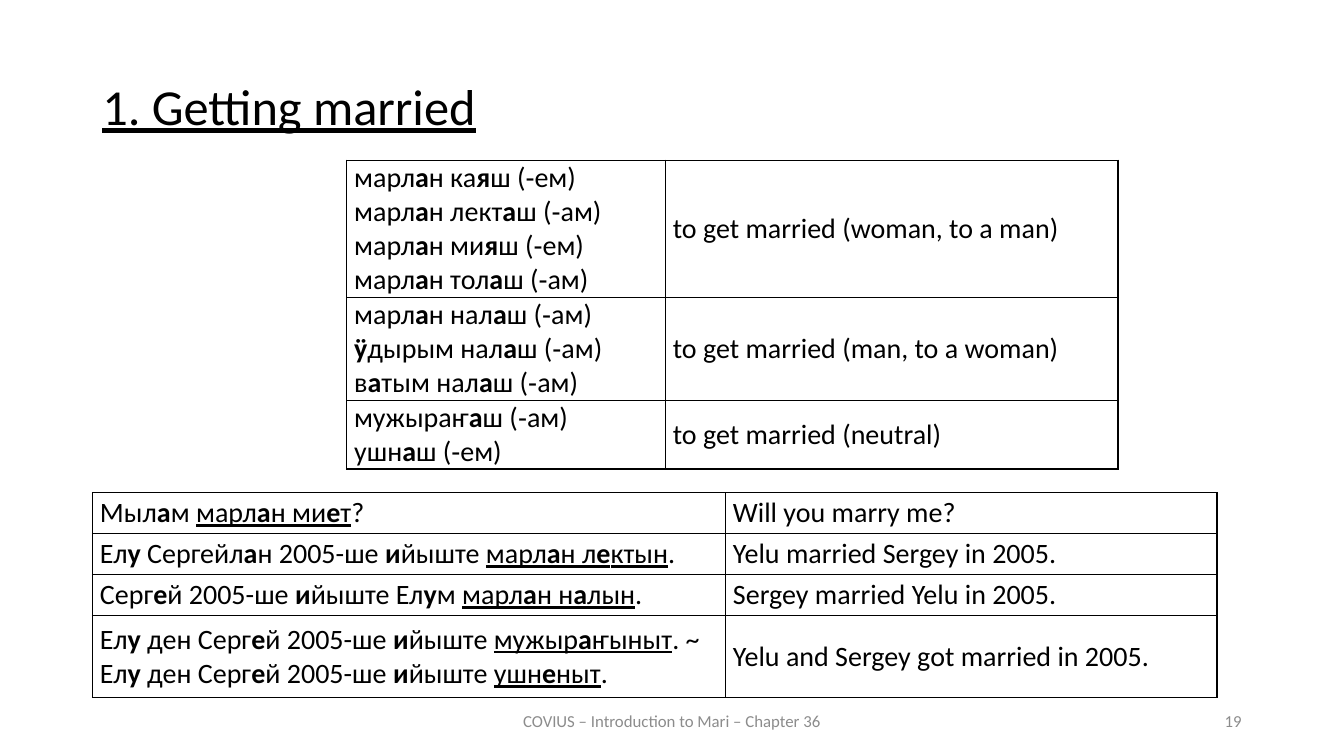
from pptx import Presentation
from pptx.dml.color import RGBColor
from pptx.enum.text import MSO_ANCHOR, PP_ALIGN
from pptx.oxml import parse_xml
from pptx.oxml.ns import nsdecls
from pptx.util import Pt

COLOURS = {"ink": "000000", "footer": "8C8C8C"}
FONT = "Calibri"
LINE_HEIGHT = 24.5

# In the texts, * switches bold on and off, and _ switches underline.
VERBS = [
    (["марл*а*н ка*я*ш (‑ем)", "марл*а*н лект*а*ш (‑ам)",
      "марл*а*н ми*я*ш (‑ем)", "марл*а*н тол*а*ш (‑ам)"],
     ["to get married (woman, to a man)"]),
    (["марл*а*н нал*а*ш (‑ам)", "*ӱ*дырым нал*а*ш (‑ам)",
      "в*а*тым нал*а*ш (‑ам)"],
     ["to get married (man, to a woman)"]),
    (["мужыраҥ*а*ш (‑ам)", "ушн*а*ш (‑ем)"],
     ["to get married (neutral)"]),
]
EXAMPLES = [
    (["Мыл*а*м _марл*а*н ми*е*т_?"], ["Will you marry me?"]),
    (["Ел*у* Сергейл*а*н 2005-ше *и*йыште _марл*а*н л*е*ктын_."],
     ["Yelu married Sergey in 2005."]),
    (["Серг*е*й 2005-ше *и*йыште Ел*у*м _марл*а*н н*а*лын_."],
     ["Sergey married Yelu in 2005."]),
    (["Ел*у* ден Серг*е*й 2005-ше *и*йыште _мужыр*а*ҥыныт_. ~",
      "Ел*у* ден Серг*е*й 2005-ше *и*йыште _ушн*е*ныт_."],
     ["Yelu and Sergey got married in 2005."]),
]


def style(para, size, colour):
    para.font.name = FONT
    para.font.size = Pt(size)
    para.font.color.rgb = RGBColor.from_string(COLOURS[colour])


def add_spans(para, marked):
    """Split marked text into runs with bold and underline."""
    bold = False
    for i, underlined in enumerate(marked.split("_")):
        for j, words in enumerate(underlined.split("*")):
            if j:
                bold = not bold
            if words:
                span = para.add_run()
                span.text = words
                span.font.bold = bold
                span.font.underline = i % 2 == 1


def add_text(page, box, words, size, colour, align, anchor):
    shape = page.shapes.add_textbox(*map(Pt, box))
    frame = shape.text_frame
    frame.word_wrap = True
    frame.vertical_anchor = anchor
    para = frame.paragraphs[0]
    para.alignment = align
    add_spans(para, words)
    style(para, size, colour)
    return para


def add_borders(cell):
    properties = cell._tc.get_or_add_tcPr()
    for side in "LRTB":
        properties.append(parse_xml(
            f'<a:ln{side} {nsdecls("a")} w="12700"><a:solidFill>'
            f'<a:srgbClr val="{COLOURS["ink"]}"/></a:solidFill></a:ln{side}>'))


def fill_cell(cell, lines):
    add_borders(cell)
    cell.fill.background()
    cell.vertical_anchor = MSO_ANCHOR.MIDDLE
    cell.margin_left = cell.margin_right = Pt(5.4)
    cell.margin_top = cell.margin_bottom = 0
    frame = cell.text_frame
    for i, line in enumerate(lines):
        para = frame.add_paragraph() if i else frame.paragraphs[0]
        add_spans(para, line)
        style(para, 20, "ink")


def add_phrase_table(page, left, top, widths, rows, line_height):
    """Mari on the left, English on the right; a row is as high as its lines."""
    heights = [len(mari) * line_height for mari, english in rows]
    box = left, top, sum(widths), sum(heights)
    table = page.shapes.add_table(len(rows), 2, *map(Pt, box)).table
    table.first_row = table.horz_banding = False
    for column, width in zip(table.columns, widths):
        column.width = Pt(width)
    for row, height, texts in zip(table.rows, heights, rows):
        row.height = Pt(height)
        for cell, lines in zip(row.cells, texts):
            fill_cell(cell, lines)


def add_title(page, box):
    para = add_text(page, box, "_1. Getting married_", 36, "ink",
                    PP_ALIGN.JUSTIFY, MSO_ANCHOR.TOP)
    para.line_spacing = 0.9
    para.space_before = Pt(12)


def add_footer(page, left, top, height):
    add_text(page, (left, top, 324, height),
             "COVIUS – Introduction to Mari – Chapter 36", 12, "footer",
             PP_ALIGN.CENTER, MSO_ANCHOR.MIDDLE)
    add_text(page, (left + 360, top, 216, height), "19", 12, "footer",
             PP_ALIGN.RIGHT, MSO_ANCHOR.MIDDLE)


def main():
    deck = Presentation()
    deck.slide_width, deck.slide_height = Pt(960), Pt(540)
    page = deck.slides.add_slide(deck.slide_layouts[6])

    # Heading
    add_title(page, (66, 54.7, 828, 59.8))
    # Example sentences, then the verbs
    add_phrase_table(page, 66, 352, (452.2, 351.2), EXAMPLES, 29.3)
    add_phrase_table(page, 247.6, 114.5, (227.6, 323.4), VERBS, LINE_HEIGHT)
    # Footer and page number
    add_footer(page, 318, 500.5, 28.8)

    deck.save("out.pptx")


if __name__ == "__main__":
    main()
